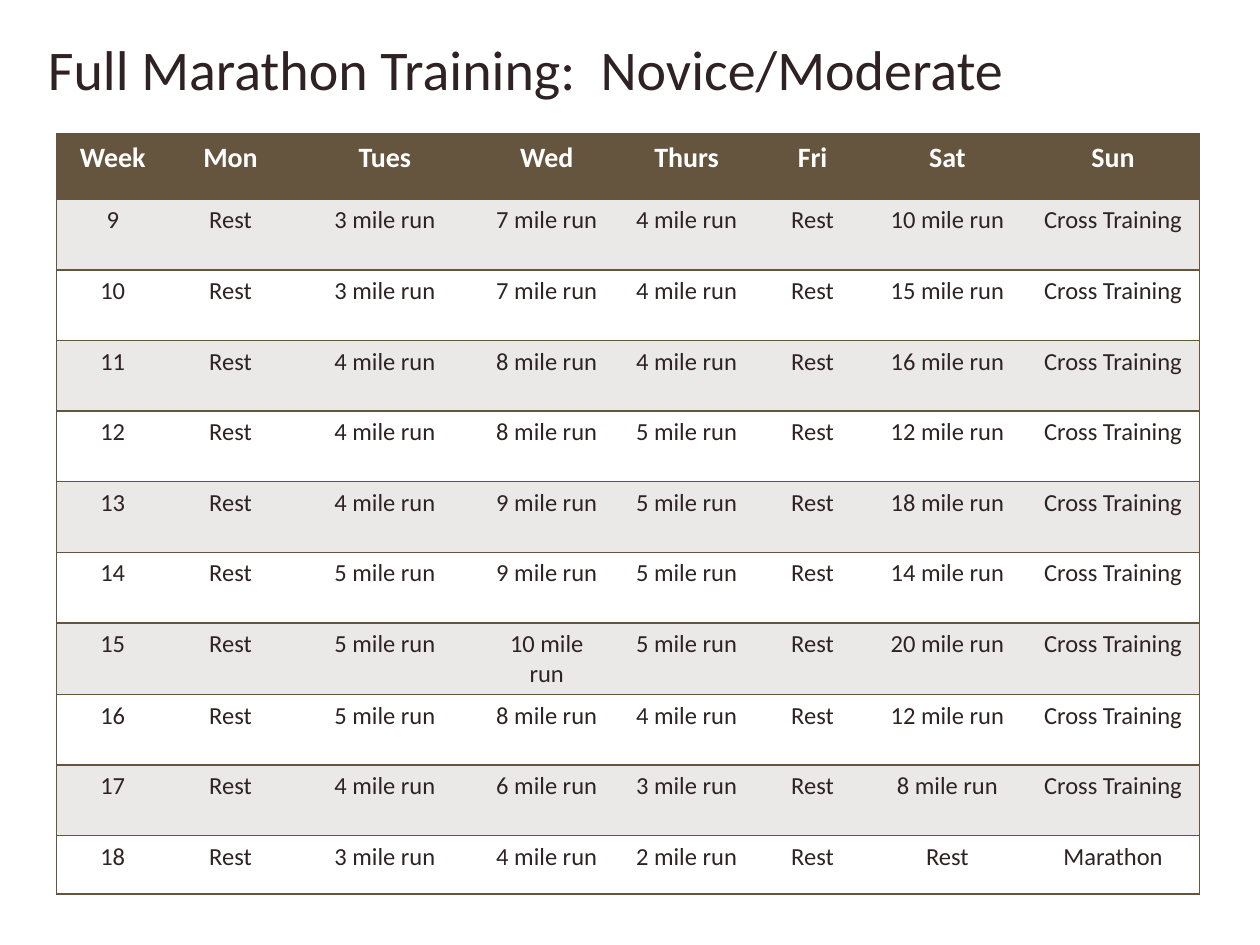
import pptx
import pptx.dml.color
import pptx.enum.text
import pptx.oxml.ns
import pptx.util
from lxml import etree

Inches = pptx.util.Inches
BROWN, GREY, WHITE, INK = "66553E", "EAE9E8", "FFFFFF", "2E2224"
NO_GRID_STYLE = "{2D5ABB26-0587-4C30-8999-92F81FD0307C}"
COL_WIDTHS = [0.89, 0.98, 1.47, 1.1, 1.12, 0.88, 1.26, 1.37]
ROW_HEIGHTS = [0.52] + [0.56] * 9 + [0.46]
HEADER = ["Week", "Mon", "Tues", "Wed", "Thurs", "Fri", "Sat", "Sun"]
FIRST_WEEK = 9
MILES = [
    (3, 7, 4, 10), (3, 7, 4, 15), (4, 8, 4, 16), (4, 8, 5, 12), (4, 9, 5, 18),
    (5, 9, 5, 14), (5, 10, 5, 20), (5, 8, 4, 12), (4, 6, 3, 8), (3, 4, 2, None),
]


def rgb(value):
    return pptx.dml.color.RGBColor.from_string(value)


def write(tf, text, size=14, color=INK, bold=False, align="CENTER"):
    p = tf.paragraphs[0]
    p.alignment = getattr(pptx.enum.text.PP_ALIGN, align)
    r = p.add_run()
    r.text = text
    r.font.name = "Calibri"
    r.font.size = pptx.util.Pt(size)
    r.font.bold = bold
    r.font.color.rgb = rgb(color)


def add_border(cell, side, color=BROWN, width=1):
    qn = pptx.oxml.ns.qn
    tc_pr = cell._tc.get_or_add_tcPr()
    ln = etree.SubElement(tc_pr, qn("a:ln" + side), w=str(pptx.util.Pt(width)))
    fill = etree.SubElement(ln, qn("a:solidFill"))
    etree.SubElement(fill, qn("a:srgbClr"), val=color)


def week_row(week, miles):
    tues, wed, thurs, sat = [f"{m} mile run" if m else "Rest" for m in miles]
    sun = "Cross Training" if miles[-1] else "Marathon"
    return [str(week), "Rest", tues, wed, thurs, "Rest", sat, sun]


def add_title(s, text, left, top, width, height):
    sp = s.shapes.title
    sp.left, sp.top, sp.width, sp.height = map(Inches, (left, top, width, height))
    tf = sp.text_frame
    tf.word_wrap = True
    tf.auto_size = pptx.enum.text.MSO_AUTO_SIZE.SHAPE_TO_FIT_TEXT
    tf.vertical_anchor = pptx.enum.text.MSO_ANCHOR.TOP
    write(tf, text, size=32, align="LEFT")


def add_schedule(s, rows, left, top, width, height):
    box = map(Inches, (left, top, width, height))
    table = s.shapes.add_table(len(rows), len(HEADER), *box).table
    table._tbl.tblPr.find(pptx.oxml.ns.qn("a:tableStyleId")).text = NO_GRID_STYLE
    for column, share in zip(table.columns, COL_WIDTHS):
        column.width = Inches(width * share / sum(COL_WIDTHS))
    for row, share in zip(table.rows, ROW_HEIGHTS):
        row.height = Inches(height * share / sum(ROW_HEIGHTS))
    for i, texts in enumerate(rows):
        header = i == 0
        fill = BROWN if header else GREY if i % 2 else WHITE
        for j, text in enumerate(texts):
            cell = table.cell(i, j)
            if j == 0:
                add_border(cell, "L")
            if j == len(texts) - 1:
                add_border(cell, "R")
            add_border(cell, "T")
            add_border(cell, "B")
            cell.fill.solid()
            cell.fill.fore_color.rgb = rgb(fill)
            if header:
                cell.margin_left = cell.margin_right = Inches(0.11)
                cell.margin_top = cell.margin_bottom = Inches(0.06)
            write(cell.text_frame, text, size=16 if header else 14,
                  color=WHITE if header else INK, bold=header)


def main():
    prs = pptx.Presentation()
    prs.slide_width, prs.slide_height = Inches(10), Inches(7.5)
    s = prs.slides.add_slide(prs.slide_layouts.get_by_name("Title Only"))
    add_title(s, "Full Marathon Training:  Novice/Moderate", 0.28, 0.22, 9.72, 0.64)
    weeks = [week_row(week, miles) for week, miles in enumerate(MILES, FIRST_WEEK)]
    add_schedule(s, [HEADER] + weeks, 0.45, 1.06, 9.07, 6.03)
    prs.save("out.pptx")


if __name__ == "__main__":
    main()
